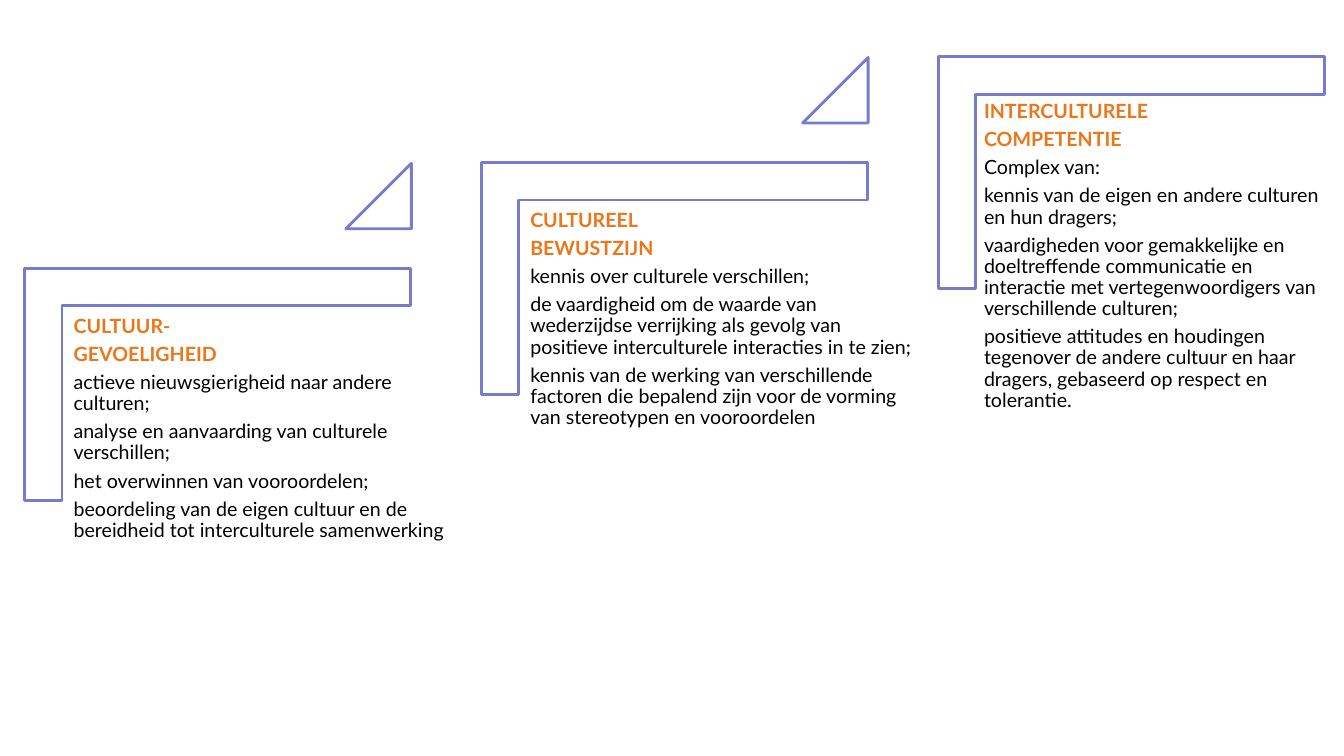
from pptx import Presentation, util as u
from pptx.dml.color import RGBColor
from pptx.enum import shapes, text

PX = 9144
HUES = {"head": "EC771B", "body": "000000", "line": "777BCE", "fill": "FFFFFF"}
SHAPE = shapes.MSO_SHAPE
STEPS = [
    ((67, 308, 407), ["CULTUUR-", "GEVOELIGHEID"], [
        "actieve nieuwsgierigheid naar andere culturen;",
        "analyse en aanvaarding van culturele verschillen;",
        "het overwinnen van vooroordelen;",
        "beoordeling van de eigen cultuur en de bereidheid tot interculturele samenwerking"]),
    ((520, 203, 400), ["CULTUREEL", "BEWUSTZIJN"], [
        "kennis over culturele verschillen;",
        "de vaardigheid om de waarde van wederzijdse verrijking als gevolg van "
        "positieve interculturele interacties in te zien;",
        "kennis van de werking van verschillende factoren die bepalend zijn voor "
        "de vorming van stereotypen en vooroordelen"]),
    ((970, 95, 346), ["INTERCULTURELE", "COMPETENTIE"], [
        "Complex van:",
        "kennis van de eigen en andere culturen en hun dragers;",
        "vaardigheden voor gemakkelijke en doeltreffende communicatie en interactie "
        "met vertegenwoordigers van verschillende culturen;",
        "positieve attitudes en houdingen tegenover de andere cultuur en haar dragers, "
        "gebaseerd op respect en tolerantie."]),
]


def px(*sizes):
    """Turn pixel lengths into EMU."""
    return [size * PX for size in sizes]


def hue(name):
    """Look up a colour by name."""
    return RGBColor.from_string(HUES[name])


def outline(slide, kind, box, adjust, turn=0):
    """Add an outlined preset shape."""
    shape = slide.shapes.add_shape(kind, *px(*box))
    shape.shadow.inherit = False
    shape.rotation = turn
    for i, value in enumerate(adjust):
        shape.adjustments[i] = value
    shape.fill.solid()
    shape.fill.fore_color.rgb = hue("fill")
    shape.line.color.rgb = hue("line")
    shape.line.width = u.Pt(2)


def write(para, words, color="body", bold=False, size=14, font="Lato"):
    """Fill one paragraph with formatted text."""
    para.line_spacing = 0.9
    para.space_after = u.Pt(4.9)
    run = para.add_run()
    run.text = words
    run.font.name = font
    run.font.size = u.Pt(size)
    run.font.bold = bold
    run.font.color.rgb = hue(color)


def label(slide, spot, heads, points):
    """Add the heading and the points of a step."""
    frame = slide.shapes.add_textbox(*px(*spot, 303)).text_frame
    frame.word_wrap = True
    frame.vertical_anchor = text.MSO_ANCHOR.TOP
    frame.margin_left = frame.margin_right = 6 * PX
    frame.margin_top = frame.margin_bottom = 6 * PX
    for i, words in enumerate(heads + points):
        para = frame.paragraphs[0] if i == 0 else frame.add_paragraph()
        top = i < len(heads)
        write(para, words, color="head" if top else "body", bold=top)


def main():
    """Build the slide with three rising steps."""
    deck = Presentation()
    deck.slide_width, deck.slide_height = px(1333, 750)
    slide = deck.slides.add_slide(deck.slide_layouts[6])
    for i, (spot, heads, points) in enumerate(STEPS):
        left, top = 101 + 453 * i, 190 - 105 * i
        outline(slide, SHAPE.CORNER, (left, top, 230, 383), [0.161, 0.161], turn=90)
        label(slide, spot, heads, points)
        if i < len(STEPS) - 1:
            outline(slide, SHAPE.ISOSCELES_TRIANGLE, (left + 242, top - 28, 65, 65), [1])
    deck.save("out.pptx")


if __name__ == "__main__":
    main()
